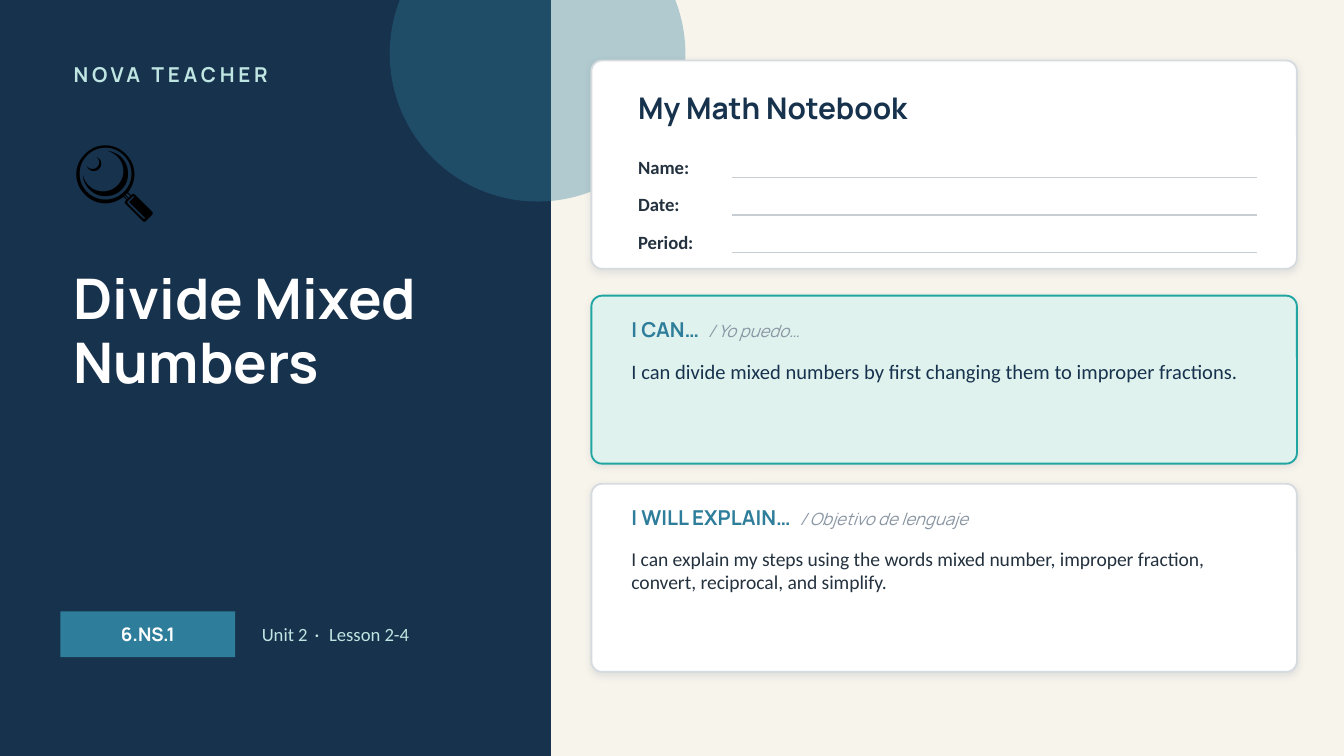
from pptx import Presentation
from pptx.dml.color import RGBColor
from pptx.enum.shapes import MSO_CONNECTOR as Connector, MSO_SHAPE as Shape
from pptx.enum.text import MSO_ANCHOR as Anchor, PP_ALIGN as Align
from pptx.oxml import parse_xml
from pptx.oxml.ns import nsdecls, qn
from pptx.oxml.xmlchemy import OxmlElement
from pptx.util import Inches, Pt

WIDTH = 10
HEIGHT = WIDTH * 9 / 16

NAVY = RGBColor(0x17, 0x32, 0x4D)
BLUE = RGBColor(0x2E, 0x7D, 0x9A)
TEAL = RGBColor(0x1F, 0xA6, 0xA2)
MINT = RGBColor(0xBF, 0xE6, 0xE2)
PALE_MINT = RGBColor(0xDF, 0xF2, 0xEE)
CREAM = RGBColor(0xF7, 0xF4, 0xEC)
WHITE = RGBColor(0xFF, 0xFF, 0xFF)
BLACK = RGBColor(0, 0, 0)
INK = RGBColor(0x24, 0x32, 0x3F)
MUTED = RGBColor(0x8A, 0x96, 0xA3)
BORDER = RGBColor(0xD6, 0xDB, 0xDF)
RULE = RGBColor(0xC7, 0xCD, 0xD2)

SHADOW = (
    f'<a:effectLst {nsdecls("a")}>'
    '<a:outerShdw blurRad="50800" dist="12700" dir="5400000" algn="bl" rotWithShape="0">'
    '<a:srgbClr val="1C2E42"><a:alpha val="10000"/></a:srgbClr>'
    '</a:outerShdw></a:effectLst>'
)


class NotebookSlide:
    heading_font = "Manrope"
    body_font = "Calibri"

    def __init__(self, presentation):
        self.slide = presentation.slides.add_slide(presentation.slide_layouts[6])
        fill = self.slide.background.fill
        fill.solid()
        fill.fore_color.rgb = CREAM

    def run(self, paragraph, text, size, color, font=body_font,
            bold=False, italic=False, spacing=0):
        run = paragraph.add_run()
        run.text = text
        run.font.size = Pt(size)
        run.font.name = font
        run.font.bold = bold
        run.font.italic = italic
        run.font.color.rgb = color
        if spacing:
            run._r.get_or_add_rPr().set("spc", str(int(spacing * 100)))

    def heading(self, paragraph, text, size, color, **style):
        self.run(paragraph, text, size, color, self.heading_font, bold=True, **style)

    def text_box(self, left, top, width, height, anchor=Anchor.MIDDLE):
        box = self.slide.shapes.add_textbox(
            Inches(left), Inches(top), Inches(width), Inches(height))
        frame = box.text_frame
        frame.word_wrap = True
        frame.vertical_anchor = anchor
        return frame.paragraphs[0]

    def shape(self, kind, left, top, width, height, fill, alpha=None):
        shape = self.slide.shapes.add_shape(
            kind, Inches(left), Inches(top), Inches(width), Inches(height))
        shape.shadow.inherit = False
        shape.fill.solid()
        shape.fill.fore_color.rgb = fill
        shape.line.fill.background()
        if alpha:
            transparency = OxmlElement("a:alpha")
            transparency.set("val", str(alpha * 1000))
            color = shape._element.spPr.find(qn("a:solidFill"))[0]
            color.append(transparency)
        return shape

    def card(self, top, height, fill=WHITE, border=BORDER):
        card = self.shape(Shape.ROUNDED_RECTANGLE, 4.4, top, 5.25, height, fill)
        card.adjustments[0] = 0.08 / height
        card.line.color.rgb = border
        card.line.width = Pt(1)
        properties = card._element.spPr
        properties.replace(properties.find(qn("a:effectLst")), parse_xml(SHADOW))

    def rule(self, left, right, y):
        line = self.slide.shapes.add_connector(
            Connector.STRAIGHT, Inches(left), Inches(y), Inches(right), Inches(y))
        line.line.color.rgb = RULE
        line.line.width = Pt(0.75)
        line._element.spPr.append(OxmlElement("a:effectLst"))

    def goal(self, top, height, title, translation, text, size, color, **card_style):
        self.card(top, height, **card_style)
        paragraph = self.text_box(4.6, top + 0.1, 4.85, 0.3)
        self.heading(paragraph, title, 11, BLUE)
        self.heading(paragraph, " ", 11, BLUE, spacing=2.5)
        self.run(paragraph, translation, 9, MUTED, self.heading_font, italic=True)
        paragraph = self.text_box(4.6, top + 0.42, 4.85, height - 0.48, Anchor.TOP)
        self.run(paragraph, text, size, color)


def main():
    presentation = Presentation()
    presentation.slide_width = Inches(WIDTH)
    presentation.slide_height = Inches(HEIGHT)
    page = NotebookSlide(presentation)

    # Cover panel
    page.shape(Shape.RECTANGLE, 0, 0, 4.1, HEIGHT, NAVY)
    page.shape(Shape.OVAL, 2.9, -0.7, 2.2, 2.2, BLUE, alpha=35)
    page.heading(page.text_box(0.45, 0.4, 3.3, 0.3), "NOVA TEACHER", 11, MINT, spacing=2)
    page.run(page.text_box(0.45, 0.85, 1.5, 0.9), "🔍", 44, BLACK)
    title = page.text_box(0.45, 1.95, 3.3, 1.7, Anchor.TOP)
    title.line_spacing = 0.95
    page.heading(title, "Divide Mixed Numbers", 30, WHITE)

    # Standard and lesson
    badge = page.shape(Shape.RECTANGLE, 0.45, 4.55, 1.3, 0.34, BLUE)
    badge.text_frame.vertical_anchor = Anchor.MIDDLE
    standard = badge.text_frame.paragraphs[0]
    standard.alignment = Align.CENTER
    page.heading(standard, "6.NS.1", 10, WHITE)
    lesson = page.text_box(1.85, 4.55, 2.1, 0.34)
    page.run(lesson, "Unit 2", 10, MINT)
    page.run(lesson, " · ", 10, MINT, spacing=1.5)
    page.run(lesson, "Lesson 2-4", 10, MINT)

    # Notebook card
    page.card(0.45, 1.55)
    page.heading(page.text_box(4.65, 0.6, 4.8, 0.4), "My Math Notebook", 16, NAVY)
    for row, label in enumerate(["Name:", "Date:", "Period:"]):
        top = 1.12 + row * 0.28
        page.run(page.text_box(4.65, top, 0.8, 0.24), label, 10, INK, bold=True)
        page.rule(5.45, 9.35, top + 0.2)

    # Learning goals
    page.goal(2.2, 1.25, "I CAN…", "/ Yo puedo…",
              "I can divide mixed numbers by first changing them to improper fractions.",
              11, NAVY, fill=PALE_MINT, border=TEAL)
    page.goal(3.6, 1.4, "I WILL EXPLAIN…", "/ Objetivo de lenguaje",
              "I can explain my steps using the words mixed number, improper fraction, "
              "convert, reciprocal, and simplify.",
              10.5, INK)

    presentation.save("out.pptx")


if __name__ == "__main__":
    main()
